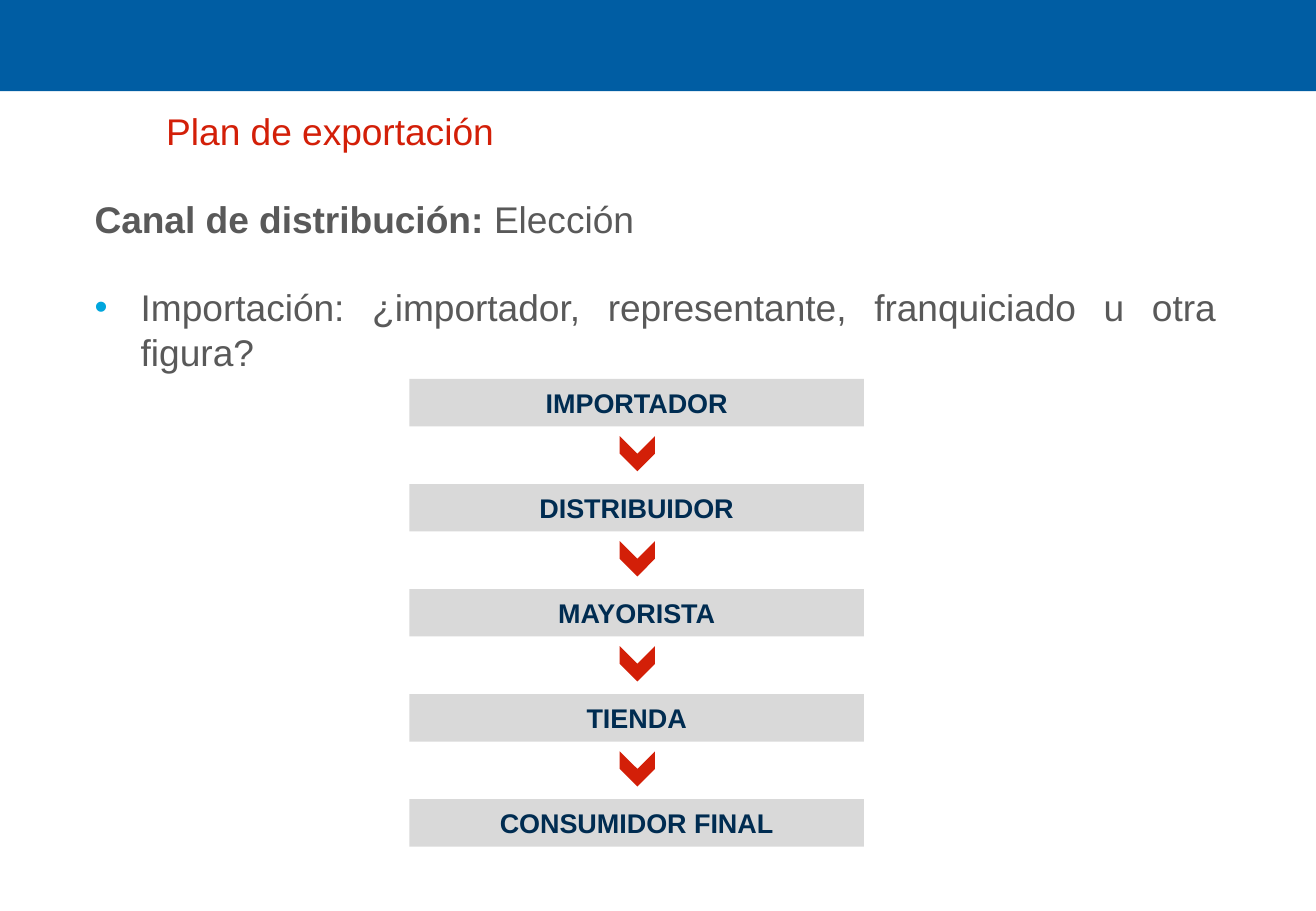
"""Build the distribution channel slide."""
from lxml.etree import SubElement
from pptx import Presentation
from pptx.dml.color import RGBColor
from pptx.enum.shapes import MSO_SHAPE
from pptx.enum.text import MSO_ANCHOR, PP_ALIGN
from pptx.oxml.ns import qn
from pptx.util import Inches, Pt

COLORS = {"band": "005DA3", "red": "D31F08", "text": "595959",
          "bullet": "00A6DD", "box": "D9D9D9", "navy": "002C51"}
PARAGRAPHS = [
    {"runs": [("Plan de exportación", "red", False)], "margin": 0.59},
    {"runs": [("Canal de distribución:", "text", True), (" Elección", "text", False)]},
    {"runs": [("Importación: ¿importador, representante, franquiciado u otra figura?",
               "text", False)], "margin": 0.38, "bullet": True},
]
STAGES = ["IMPORTADOR", "DISTRIBUIDOR", "MAYORISTA", "TIENDA", "CONSUMIDOR FINAL"]
BOX_X, BOX_Y, BOX_W, BOX_H = 3.37, 3.12, 3.74, 0.39
STEP = 0.865
ARROW_X, ARROW_DY, ARROW_SIZE = 5.1, 0.47, 0.29


def rgb(name):
    return RGBColor.from_string(COLORS[name])


def add_filled(s, kind, x, y, w, h, color):
    sp = s.shapes.add_shape(kind, Inches(x), Inches(y), Inches(w), Inches(h))
    sp.shadow.inherit = False
    sp.fill.solid()
    sp.fill.fore_color.rgb = rgb(color)
    sp.line.fill.background()
    return sp


def add_run(p, text, size, color, bold):
    r = p.add_run()
    r.text = text
    r.font.name = "Arial"
    r.font.size = Pt(size)
    r.font.bold = bold
    r.font.color.rgb = rgb(color)


def add_bullet(p):
    pPr = p._p.get_or_add_pPr()
    pPr.set("indent", str(-Inches(0.38)))
    clr = SubElement(pPr, qn("a:buClr"))
    SubElement(clr, qn("a:srgbClr"), val=COLORS["bullet"])
    SubElement(pPr, qn("a:buFont"), typeface="Arial")
    SubElement(pPr, qn("a:buChar"), char="•")


def add_body(s):
    tf = s.shapes.add_textbox(Inches(0.68), Inches(0.84), Inches(9.43), Inches(2.25)).text_frame
    tf.word_wrap = True
    for i, item in enumerate(PARAGRAPHS):
        p = tf.add_paragraph() if i else tf.paragraphs[0]
        if i:
            p.space_before = Pt(26)
        p._p.get_or_add_pPr().set("marL", str(Inches(item.get("margin", 0))))
        if item.get("bullet"):
            p.alignment = PP_ALIGN.JUSTIFY
            add_bullet(p)
        for text, color, bold in item["runs"]:
            add_run(p, text, 22, color, bold)


def add_channel(s):
    for i, stage in enumerate(STAGES):
        y = BOX_Y + i * STEP
        sp = add_filled(s, MSO_SHAPE.RECTANGLE, BOX_X, y, BOX_W, BOX_H, "box")
        tf = sp.text_frame
        tf.vertical_anchor = MSO_ANCHOR.MIDDLE
        p = tf.paragraphs[0]
        p.alignment = PP_ALIGN.CENTER
        add_run(p, stage, 16, "navy", True)
        if i < len(STAGES) - 1:
            arrow = add_filled(s, MSO_SHAPE.CHEVRON, ARROW_X, y + ARROW_DY,
                               ARROW_SIZE, ARROW_SIZE, "red")
            arrow.rotation = 90


def main():
    prs = Presentation()
    prs.slide_width, prs.slide_height = Inches(10.83), Inches(7.5)
    s = prs.slides.add_slide(prs.slide_layouts[6])
    add_filled(s, MSO_SHAPE.RECTANGLE, 0, 0, 10.83, 0.75, "band")
    add_body(s)
    add_channel(s)
    prs.save("out.pptx")


if __name__ == "__main__":
    main()
